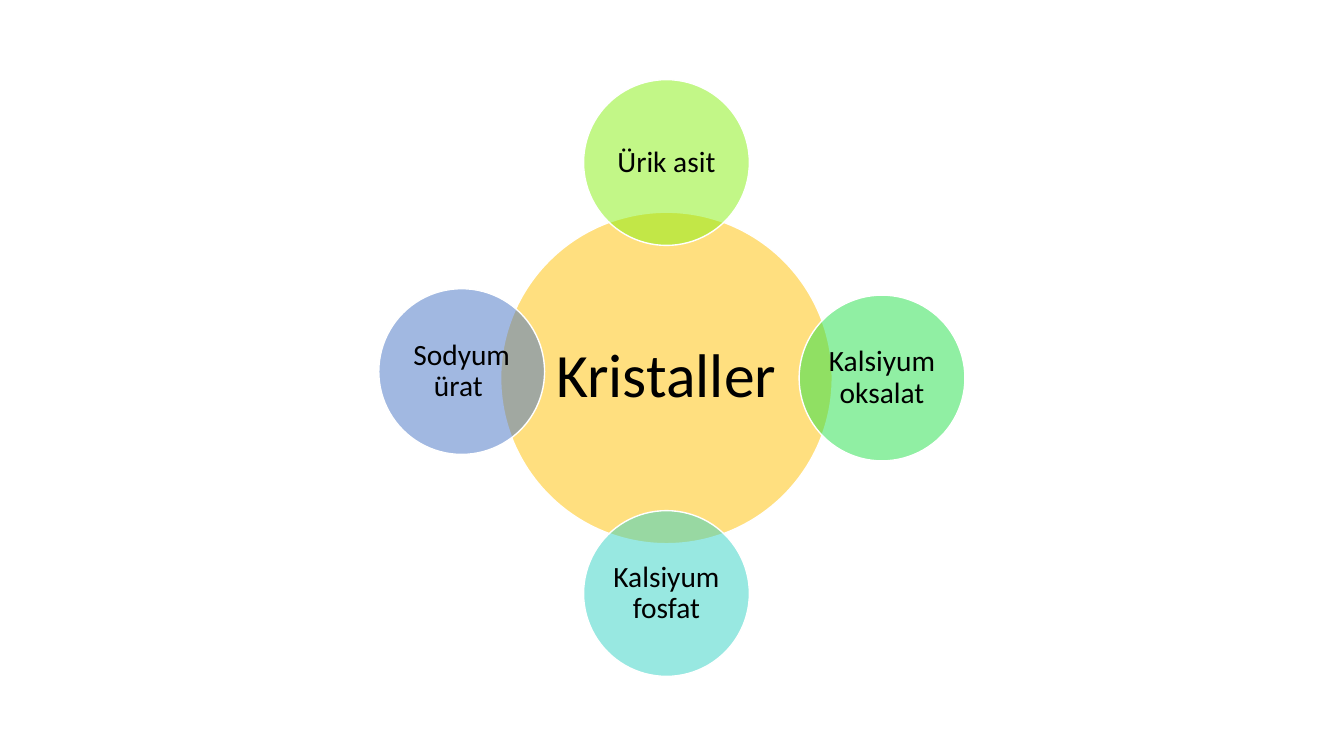
from lxml.etree import SubElement
from pptx import Presentation
from pptx.dml.color import RGBColor
from pptx.enum.shapes import MSO_SHAPE
from pptx.enum.text import MSO_ANCHOR, PP_ALIGN
from pptx.oxml.ns import qn
from pptx.util import Inches, Pt

COLORS = {
    "gold": "FFC000", "lime": "86F011", "green": "23E148",
    "teal": "33D2C5", "blue": "4472C4", "white": "FFFFFF", "black": "000000",
}
# Label, colour, and centre offset from the core in orbit radii
CRYSTALS = [
    ("Ürik asit", "lime", 0, -1),
    ("Kalsiyum oksalat", "green", 1, 0),
    ("Kalsiyum fosfat", "teal", 0, 1),
    ("Sodyum ürat ", "blue", -0.95, -0.03),
]


def rgb(name):
    return RGBColor.from_string(COLORS[name])


def add_disc(slide, x, y, width, label, color, size, inset):
    """Add a half-transparent labelled circle centred on x, y."""
    disc = slide.shapes.add_shape(
        MSO_SHAPE.OVAL, Inches(x - width / 2), Inches(y - width / 2),
        Inches(width), Inches(width))
    disc.shadow.inherit = False
    disc.fill.solid()
    disc.fill.fore_color.rgb = rgb(color)
    tint = disc.element.spPr.find(qn("a:solidFill")).find(qn("a:srgbClr"))
    SubElement(tint, qn("a:alpha")).set("val", "50000")
    disc.line.color.rgb = rgb("white")
    disc.line.width = Pt(1)

    frame = disc.text_frame
    frame.text = label
    frame.word_wrap = True
    frame.vertical_anchor = MSO_ANCHOR.MIDDLE
    frame.margin_left = frame.margin_right = Inches(inset)
    frame.margin_top = frame.margin_bottom = Inches(inset)
    para = frame.paragraphs[0]
    para.alignment = PP_ALIGN.CENTER
    para.line_spacing = 0.9
    font = para.runs[0].font
    font.name = "Calibri"
    font.size = Pt(size)
    font.color.rgb = rgb("black")


def add_radial(slide, left, top, side):
    """Fill a square box with a core circle and its satellites."""
    core, moon = side * 5 / 9, side * 5 / 18
    orbit = (side - moon) / 2
    x, y = left + side / 2, top + side / 2
    add_disc(slide, x, y, core, "Kristaller", "gold", 44, 0.06)
    for label, color, dx, dy in CRYSTALS:
        add_disc(slide, x + dx * orbit, y + dy * orbit, moon,
                 label, color, 21, 0.03)


def main():
    deck = Presentation()
    deck.slide_width, deck.slide_height = Inches(13.33), Inches(7.5)
    slide = deck.slides.add_slide(deck.slide_layouts[6])
    add_radial(slide, 3.65, 0.79, 5.92)
    deck.save("out.pptx")


if __name__ == "__main__":
    main()
